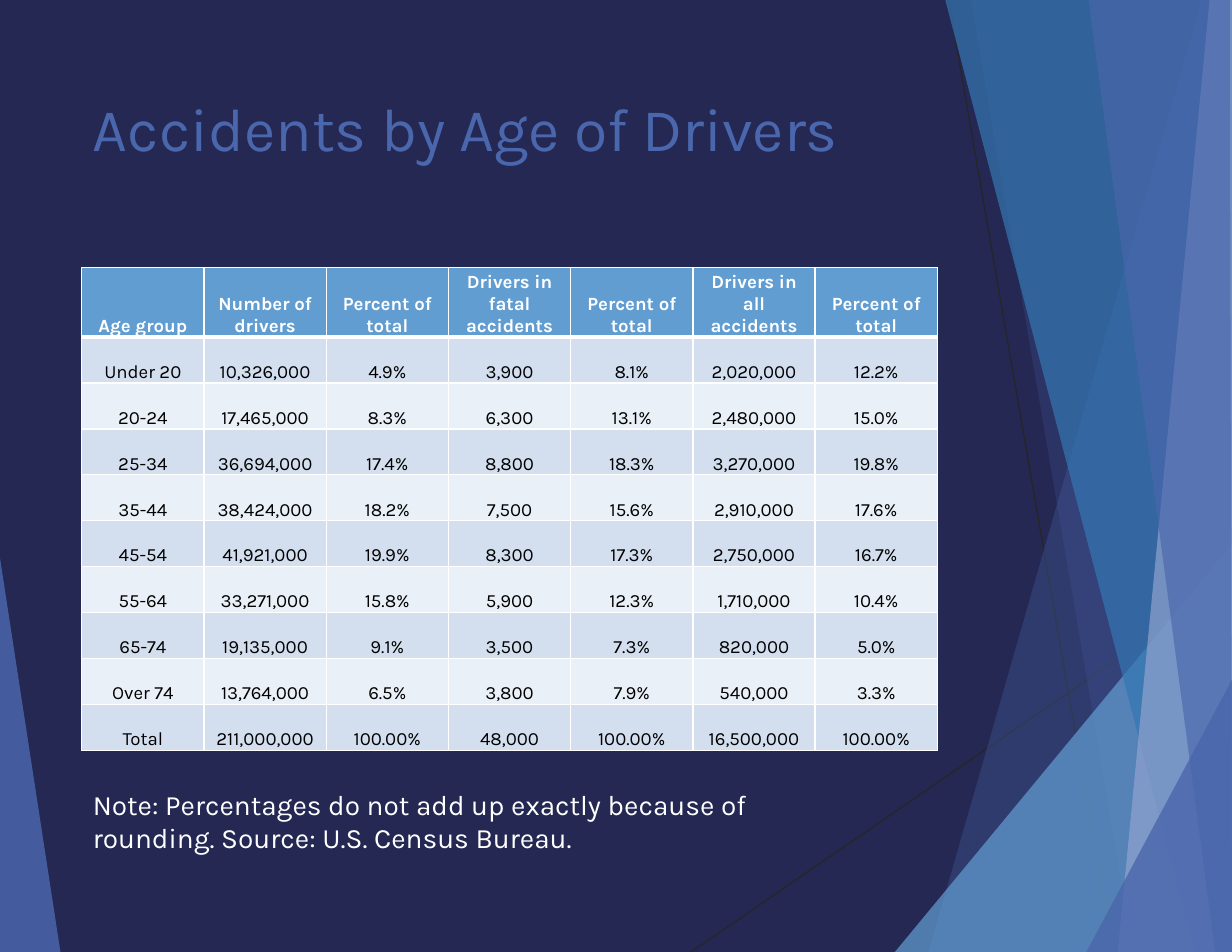
from dataclasses import dataclass
from lxml.etree import SubElement
from pptx import Presentation
from pptx.dml.color import RGBColor
from pptx.enum.shapes import MSO_CONNECTOR
from pptx.enum.text import MSO_ANCHOR, PP_ALIGN
from pptx.oxml.ns import qn
from pptx.util import Inches, Pt

# Content
TITLE = "Accidents by Age of Drivers"
NOTE = ("Note: Percentages do not add up exactly because of rounding. "
        "Source: U.S. Census Bureau.")
ROWS = [
    ("Age group", "Number of drivers", "Percent of total",
     "Drivers in fatal accidents", "Percent of total",
     "Drivers in all accidents", "Percent of total"),
    ("Under 20", "10,326,000", "4.9%", "3,900", "8.1%", "2,020,000", "12.2%"),
    ("20-24", "17,465,000", "8.3%", "6,300", "13.1%", "2,480,000", "15.0%"),
    ("25-34", "36,694,000", "17.4%", "8,800", "18.3%", "3,270,000", "19.8%"),
    ("35-44", "38,424,000", "18.2%", "7,500", "15.6%", "2,910,000", "17.6%"),
    ("45-54", "41,921,000", "19.9%", "8,300", "17.3%", "2,750,000", "16.7%"),
    ("55-64", "33,271,000", "15.8%", "5,900", "12.3%", "1,710,000", "10.4%"),
    ("65-74", "19,135,000", "9.1%", "3,500", "7.3%", "820,000", "5.0%"),
    ("Over 74", "13,764,000", "6.5%", "3,800", "7.9%", "540,000", "3.3%"),
    ("Total", "211,000,000", "100.00%", "48,000", "100.00%", "16,500,000", "100.00%"),
]


@dataclass(frozen=True)
class Theme:
    font: str = "Karla"
    back: str = "242852"
    blue: str = "4A66AC"
    sky: str = "629DD1"
    teal: str = "3477B2"
    mist: str = "90A2CF"
    dark: str = "262626"
    white: str = "FFFFFF"
    black: str = "000000"
    bands: tuple = ("EAF0F7", "D3DFEE")
    head: int = 39
    note: int = 18
    cell: int = 12


T = Theme()
WIDE, HIGH = 11, 8.5
LEFT, SPAN = 0.73, 7.64
TOP, HEAD, ROW = 2.39, 0.62, 0.41

# Background art: thin lines, then shards as (colour, percent opaque, corners)
LINES = [((6.17, HIGH), (WIDE, 5.18)), ((8.47, 0), (9.94, HIGH))]
EDGE = [(WIDE, HIGH), (WIDE, 0)]
SHARDS = [
    (T.blue, 85, [(0, 4.98), (0.54, HIGH), (0, HIGH)]),
    (T.blue, 30, [(10.73, 0), (8.29, HIGH), *EDGE]),
    (T.blue, 20, [(8.67, 0), (10.12, HIGH), *EDGE]),
    (T.sky, 72, [(7.99, HIGH), (WIDE, 4.86), (WIDE, HIGH)]),
    (T.teal, 70, [(8.44, 0), (10.67, HIGH), *EDGE]),
    (T.mist, 70, [(10.8, 0), (9.98, HIGH), *EDGE]),
    (T.blue, 65, [(9.72, 0), (10.85, HIGH), (WIDE, HIGH), (10.98, 0)]),
    (T.blue, 80, [(9.7, HIGH), (WIDE, 6.07), (WIDE, HIGH)]),
]


def paint(fill, tone):
    fill.solid()
    fill.fore_color.rgb = RGBColor.from_string(tone)


def style(par, size, tone, bold=False):
    font = par.font
    font.name, font.size, font.bold = T.font, Pt(size), bold
    font.color.rgb = RGBColor.from_string(tone)


def place(shape, *box):
    shape.left, shape.top, shape.width, shape.height = map(Inches, box)


def add_line(slide, start, end):
    line = slide.shapes.add_connector(
        MSO_CONNECTOR.STRAIGHT, *map(Inches, (*start, *end)))
    line.line.width = Pt(0.75)
    paint(line.line.fill, T.dark)
    SubElement(line._element.spPr, qn("a:effectLst"))


def add_shard(slide, tone, alpha, points):
    first, *rest = [tuple(map(Inches, point)) for point in points]
    form = slide.shapes.build_freeform(*first)
    form.add_line_segments(rest)
    shard = form.convert_to_shape()
    shard.shadow.inherit = False
    paint(shard.fill, tone)
    shard.line.fill.background()
    color = shard._element.spPr.find(".//" + qn("a:srgbClr"))
    SubElement(color, qn("a:alpha"), val=str(alpha * 1000))


def add_border(cell, side, width):
    line = SubElement(cell._tc.get_or_add_tcPr(), qn("a:ln" + side), w=str(Pt(width)))
    fill = SubElement(line, qn("a:solidFill"))
    SubElement(fill, qn("a:srgbClr"), val=T.white)


def fill_cell(cell, text, row):
    cell.text = text
    cell.vertical_anchor = MSO_ANCHOR.BOTTOM
    cell.margin_left = cell.margin_right = Inches(0.1)
    cell.margin_top = cell.margin_bottom = 0
    par = cell.text_frame.paragraphs[0]
    par.alignment = PP_ALIGN.CENTER
    style(par, T.cell, T.black if row else T.white, bold=not row)
    for side in "LRTB":
        thick = (row, side) in ((0, "B"), (1, "T"))
        add_border(cell, side, 3 if thick else 1)
    paint(cell.fill, T.bands[row % 2] if row else T.sky)


def add_grid(slide):
    count = len(ROWS[0])
    high = HEAD + ROW * (len(ROWS) - 1)
    grid = slide.shapes.add_table(
        len(ROWS), count, *map(Inches, (LEFT, TOP, SPAN, high))).table
    for col in grid.columns:
        col.width = Inches(SPAN / count)
    for r, texts in enumerate(ROWS):
        grid.rows[r].height = Inches(ROW if r else HEAD)
        for c, text in enumerate(texts):
            fill_cell(grid.cell(r, c), text, r)


def main():
    deck = Presentation()
    deck.slide_width, deck.slide_height = Inches(WIDE), Inches(HIGH)
    slide = deck.slides.add_slide(deck.slide_layouts[5])
    paint(slide.background.fill, T.back)

    # Background art
    for start, end in LINES:
        add_line(slide, start, end)
    for shard in SHARDS:
        add_shard(slide, *shard)

    # Title
    title = slide.shapes.title
    place(title, LEFT, 0.76, SPAN, 1.64)
    title.text = TITLE
    title.text_frame.vertical_anchor = MSO_ANCHOR.TOP
    par = title.text_frame.paragraphs[0]
    par.alignment = PP_ALIGN.LEFT
    style(par, T.head, T.blue)

    # Table and note
    add_grid(slide)
    note = slide.shapes.add_textbox(*map(Inches, (LEFT, 6.98, 6.08, 0.7)))
    note.text_frame.word_wrap = True
    note.text_frame.text = NOTE
    style(note.text_frame.paragraphs[0], T.note, T.white)

    deck.save("out.pptx")


if __name__ == "__main__":
    main()
